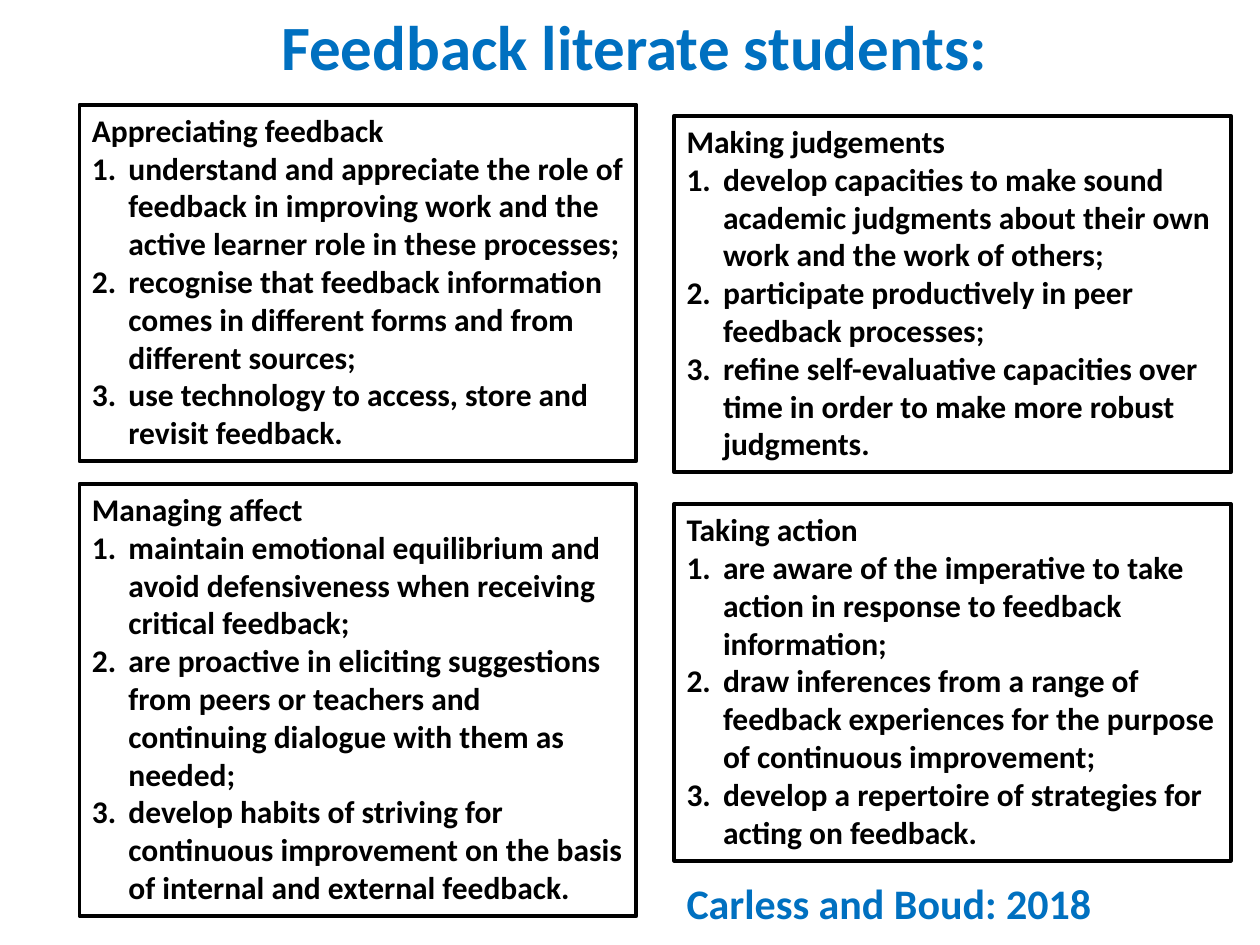
from dataclasses import dataclass

from lxml.etree import SubElement
from pptx import Presentation
from pptx.dml.color import RGBColor as RGB
from pptx.enum.shapes import MSO_SHAPE as Shape
from pptx.enum.text import MSO_ANCHOR as Anchor, MSO_AUTO_SIZE as Fit, PP_ALIGN as Align
from pptx.oxml.ns import qn
from pptx.util import Pt


@dataclass(frozen=True)
class Theme:
    font: str = "Calibri"
    ink: RGB = RGB(0, 0, 0)
    blue: RGB = RGB(0x00, 0x70, 0xC0)
    title: float = 36
    body: float = 18
    cite: float = 24
    line: float = 2.25


THEME = Theme()
LEFT, RIGHT, WIDTH = 45.4, 385.2, 318.2
INDENT = 20.9

# Each panel: left, top, height, heading, numbered points
PANELS = [
    (LEFT, 59.8, 203.8, "Appreciating feedback", [
        "understand and appreciate the role of feedback in improving work "
        "and the active learner role in these processes;",
        "recognise that feedback information comes in different forms and "
        "from different sources;",
        "use technology to access, store and revisit feedback.",
    ]),
    (RIGHT, 66.2, 203.8, "Making judgements", [
        "develop capacities to make sound academic judgments about their "
        "own work and the work of others;",
        "participate productively in peer feedback processes;",
        "refine self-evaluative capacities over time in order to make more "
        "robust judgments.",
    ]),
    (LEFT, 276.5, 247, "Managing affect", [
        "maintain emotional equilibrium and avoid defensiveness when "
        "receiving critical feedback;",
        "are proactive in eliciting suggestions from peers or teachers and "
        "continuing dialogue with them as needed;",
        "develop habits of striving for continuous improvement on the basis "
        "of internal and external feedback.",
    ]),
    (RIGHT, 288, 203.8, "Taking action", [
        "are aware of the imperative to take action in response to feedback "
        "information;",
        "draw inferences from a range of feedback experiences for the "
        "purpose of continuous improvement;",
        "develop a repertoire of strategies for acting on feedback.",
    ]),
]


def add_run(para, text, size, color):
    run = para.add_run()
    run.text = text
    font = run.font
    font.name, font.size, font.bold = THEME.font, Pt(size), True
    font.color.rgb = color


def number(para):
    """Give the paragraph a hanging automatic number."""
    props = para._p.get_or_add_pPr()
    props.set("marL", str(Pt(INDENT)))
    props.set("indent", str(-Pt(INDENT)))
    SubElement(props, qn("a:buFont"), typeface="+mj-lt")
    SubElement(props, qn("a:buAutoNum"), type="arabicPeriod")


def add_panel(slide, left, top, height, heading, points):
    box = slide.shapes.add_shape(
        Shape.RECTANGLE, Pt(left), Pt(top), Pt(WIDTH), Pt(height))
    box.shadow.inherit = False
    box.fill.background()
    box.line.color.rgb = THEME.ink
    box.line.width = Pt(THEME.line)
    frame = box.text_frame
    frame.word_wrap = True
    frame.auto_size = Fit.SHAPE_TO_FIT_TEXT
    frame.vertical_anchor = Anchor.TOP
    para = frame.paragraphs[0]
    para.alignment = Align.LEFT
    add_run(para, heading, THEME.body, THEME.ink)
    for point in points:
        para = frame.add_paragraph()
        para.alignment = Align.LEFT
        number(para)
        add_run(para, point, THEME.body, THEME.ink)


def add_label(slide, left, top, width, height, text, size):
    """Add a blue one-line text box and return its frame."""
    box = slide.shapes.add_textbox(Pt(left), Pt(top), Pt(width), Pt(height))
    frame = box.text_frame
    frame.word_wrap = True
    add_run(frame.paragraphs[0], text, size, THEME.blue)
    return frame


def main():
    deck = Presentation()
    deck.slide_width, deck.slide_height = Pt(720), Pt(540)
    slide = deck.slides.add_slide(deck.slide_layouts[6])

    title = add_label(slide, 19.4, 15.1, 686.2, 28.8,
                      "Feedback literate students:", THEME.title)
    title.vertical_anchor = Anchor.MIDDLE
    title.paragraphs[0].alignment = Align.CENTER
    title.paragraphs[0].line_spacing = 0.85

    for panel in PANELS:
        add_panel(slide, *panel)

    cite = add_label(slide, RIGHT, 498.2, 303.1, 36,
                     "Carless and Boud: 2018", THEME.cite)
    cite.auto_size = Fit.SHAPE_TO_FIT_TEXT
    deck.save("out.pptx")


if __name__ == "__main__":
    main()
